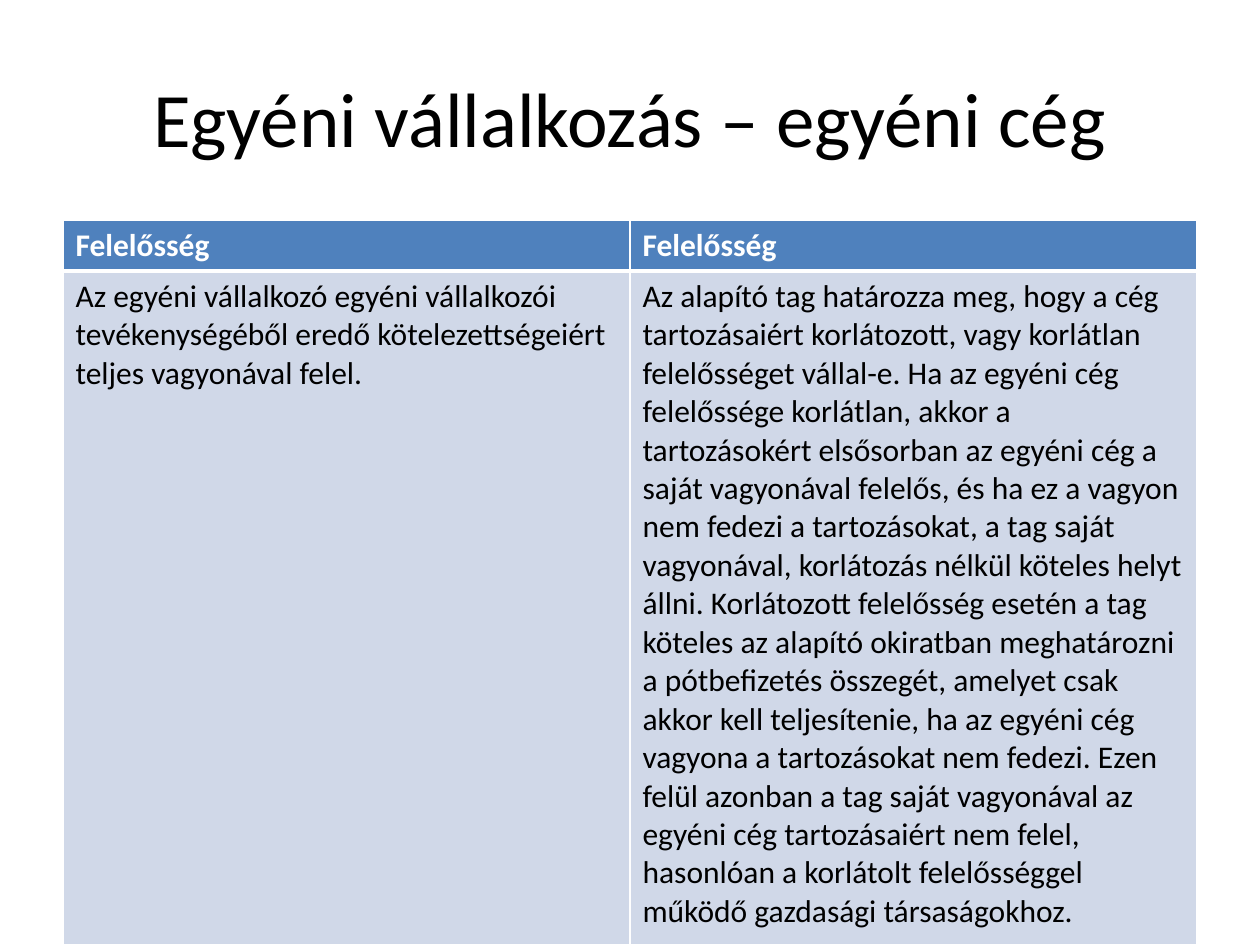
import dataclasses

import lxml.etree
import pptx
import pptx.dml.color
import pptx.enum.text
import pptx.oxml.ns
import pptx.util
from pptx.util import Inches


@dataclasses.dataclass(frozen=True)
class Theme:
    font: str = "Calibri"
    text: str = "000000"
    header_text: str = "FFFFFF"
    header_fill: str = "4F81BD"
    body_fill: str = "D0D8E8"
    border: str = "FFFFFF"
    title_size: int = 44
    table_size: int = 18
    thin_line: int = 1
    thick_line: int = 3


THEME = Theme()

TITLE = "Egyéni vállalkozás – egyéni cég"
HEADERS = ["Felelősség", "Felelősség"]
LIABILITIES = [
    "Az egyéni vállalkozó egyéni vállalkozói tevékenységéből eredő "
    "kötelezettségeiért teljes vagyonával felel.",
    "Az alapító tag határozza meg, hogy a cég tartozásaiért korlátozott, vagy "
    "korlátlan felelősséget vállal-e. Ha az egyéni cég felelőssége korlátlan, "
    "akkor a tartozásokért elsősorban az egyéni cég a saját vagyonával felelős, "
    "és ha ez a vagyon nem fedezi a tartozásokat, a tag saját vagyonával, "
    "korlátozás nélkül köteles helyt állni. Korlátozott felelősség esetén a tag "
    "köteles az alapító okiratban meghatározni a pótbefizetés összegét, amelyet "
    "csak akkor kell teljesítenie, ha az egyéni cég vagyona a tartozásokat nem "
    "fedezi. Ezen felül azonban a tag saját vagyonával az egyéni cég "
    "tartozásaiért nem felel, hasonlóan a korlátolt felelősséggel működő "
    "gazdasági társaságokhoz.",
]


def rgb(value):
    return pptx.dml.color.RGBColor.from_string(value)


def add_run(paragraph, text, size, color, bold=False):
    run = paragraph.add_run()
    run.text = text
    run.font.name = THEME.font
    run.font.size = pptx.util.Pt(size)
    run.font.color.rgb = rgb(color)
    run.font.bold = bold


def set_borders(cell, widths):
    """Draw the cell's edges; widths maps L, R, T and B, in that order, to points."""
    properties = cell._tc.get_or_add_tcPr()
    qualified = pptx.oxml.ns.qn
    for index, (side, width) in enumerate(widths.items()):
        line = lxml.etree.Element(qualified(f"a:ln{side}"), w=str(pptx.util.Pt(width)))
        fill = lxml.etree.SubElement(line, qualified("a:solidFill"))
        lxml.etree.SubElement(fill, qualified("a:srgbClr"), val=THEME.border)
        properties.insert(index, line)


def add_title(slide, left, top, width, height):
    frame = slide.shapes.add_textbox(left, top, width, height).text_frame
    frame.word_wrap = True
    frame.vertical_anchor = pptx.enum.text.MSO_ANCHOR.MIDDLE
    paragraph = frame.paragraphs[0]
    paragraph.alignment = pptx.enum.text.PP_ALIGN.CENTER
    add_run(paragraph, TITLE, THEME.title_size, THEME.text)


def add_comparison_table(slide, left, top, width, height):
    """Add the two-column table; the body row takes the height below the header."""
    rows = [HEADERS, LIABILITIES]
    table = slide.shapes.add_table(
        len(rows), len(HEADERS), left, top, width, height
    ).table
    header_height = Inches(0.4)
    table.rows[0].height = header_height
    table.rows[1].height = height - header_height
    thin, thick = THEME.thin_line, THEME.thick_line
    for row_index, texts in enumerate(rows):
        is_header = row_index == 0
        fill = THEME.header_fill if is_header else THEME.body_fill
        color = THEME.header_text if is_header else THEME.text
        top_width, bottom_width = (thin, thick) if is_header else (thick, thin)
        for column_index, text in enumerate(texts):
            cell = table.cell(row_index, column_index)
            cell.fill.solid()
            cell.fill.fore_color.rgb = rgb(fill)
            set_borders(cell, {"L": thin, "R": thin, "T": top_width, "B": bottom_width})
            paragraph = cell.text_frame.paragraphs[0]
            add_run(paragraph, text, THEME.table_size, color, bold=is_header)


def main():
    presentation = pptx.Presentation()
    presentation.slide_width = Inches(10)
    presentation.slide_height = Inches(7.5)
    slide = presentation.slides.add_slide(presentation.slide_layouts[6])
    margin = Inches(0.5)
    content_width = presentation.slide_width - 2 * margin
    add_title(slide, margin, Inches(0.3), content_width, Inches(1.25))
    table_top = Inches(1.75)
    table_height = presentation.slide_height - table_top
    add_comparison_table(slide, margin, table_top, content_width, table_height)
    presentation.save("out.pptx")


if __name__ == "__main__":
    main()
